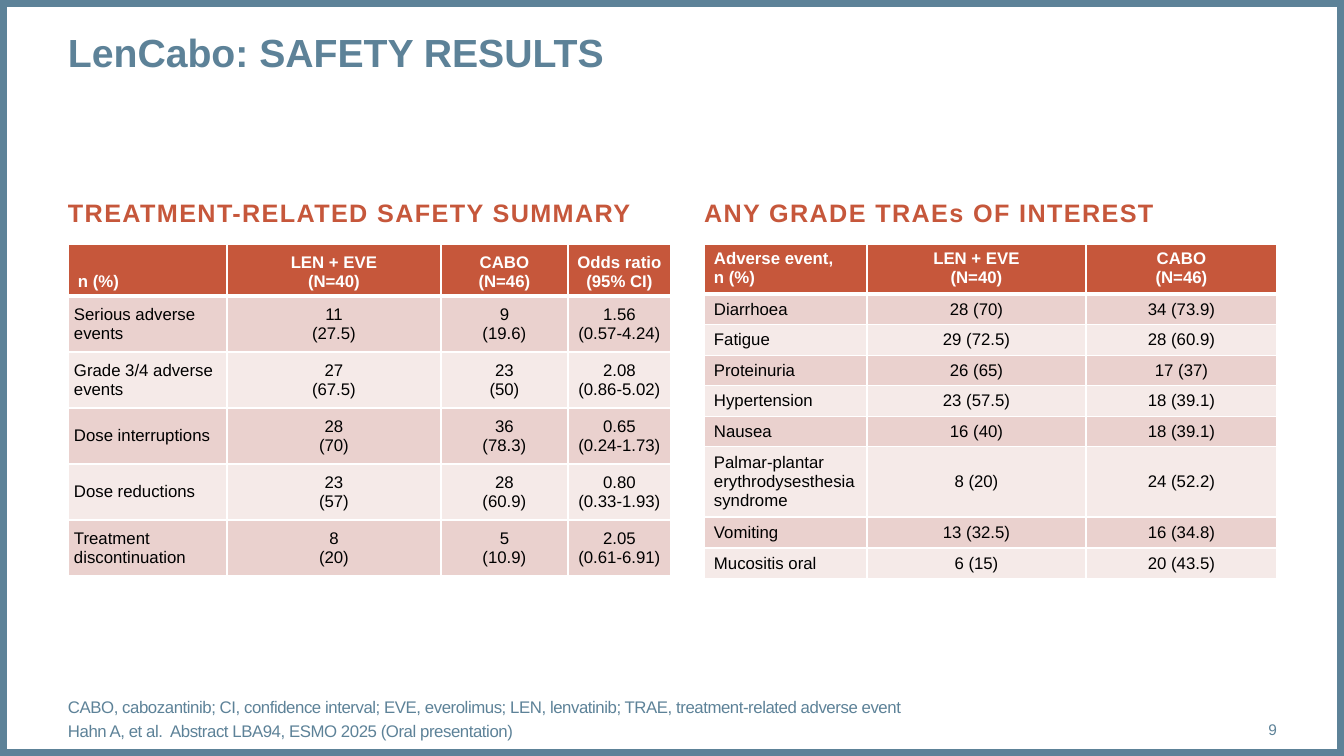
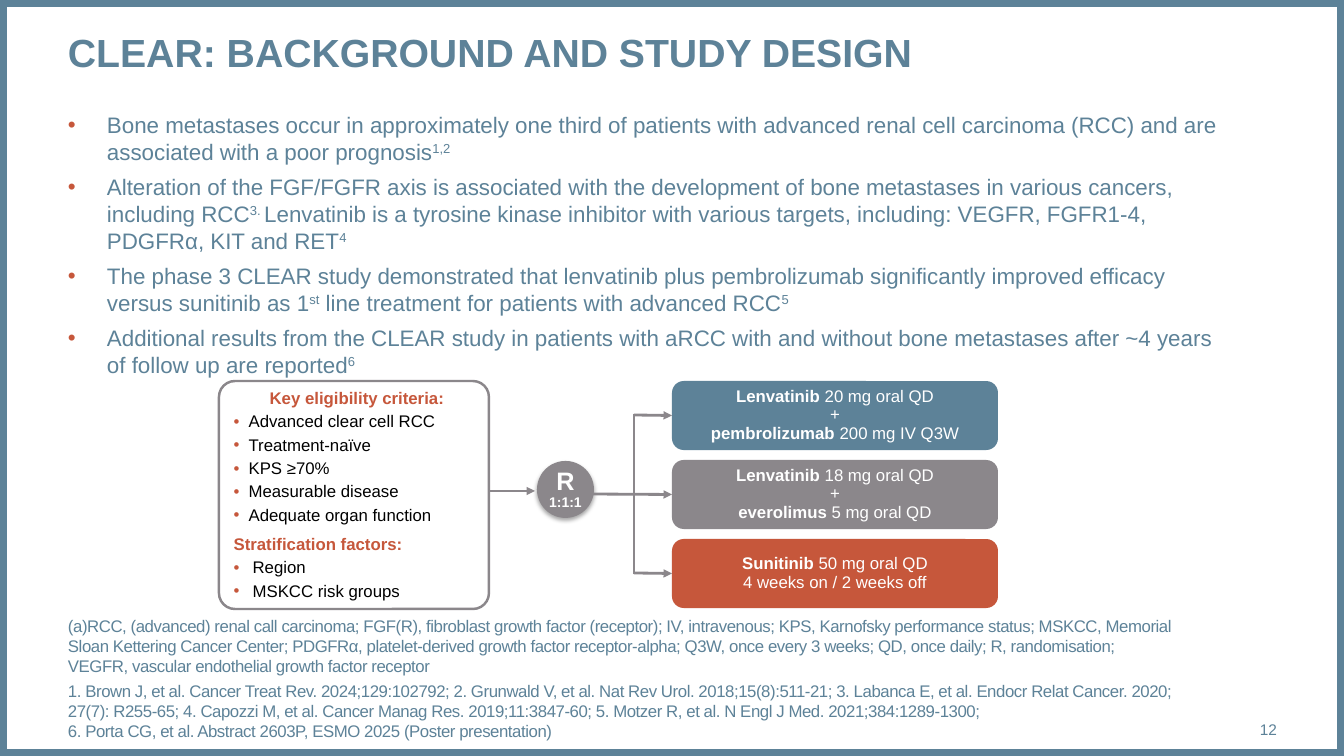
from copy import deepcopy

from pptx import Presentation
from pptx.dml.color import RGBColor
from pptx.enum.shapes import MSO_CONNECTOR, MSO_SHAPE
from pptx.enum.text import MSO_ANCHOR, PP_ALIGN
from pptx.oxml import parse_xml
from pptx.oxml.ns import nsdecls, qn
from pptx.util import Pt

# Scale: the slide is 1344 x 756 px
SLIDE_WIDTH, SLIDE_HEIGHT = 1344, 756
EMU_PER_PX = 12192000 / SLIDE_WIDTH
MARGIN = 68

# Shared look
FONT = "Arial"
BLUE = RGBColor(0x5D, 0x82, 0x98)
RUST = RGBColor(0xC6, 0x57, 0x3B)
GRAY = RGBColor(0x8B, 0x87, 0x8B)
BAND_DARK = RGBColor(0xEA, 0xD1, 0xCE)
BAND_LIGHT = RGBColor(0xF5, 0xEA, 0xE8)
WHITE = RGBColor(0xFF, 0xFF, 0xFF)
BLACK = RGBColor(0, 0, 0)
BOLD = {"bold": True}
SUPER = {"baseline": 30000}

TOP, MIDDLE, BOTTOM = MSO_ANCHOR.TOP, MSO_ANCHOR.MIDDLE, MSO_ANCHOR.BOTTOM
CENTER, RIGHT = PP_ALIGN.CENTER, PP_ALIGN.RIGHT
RECTANGLE, ROUNDED, OVAL = MSO_SHAPE.RECTANGLE, MSO_SHAPE.ROUNDED_RECTANGLE, MSO_SHAPE.OVAL
STRAIGHT = MSO_CONNECTOR.STRAIGHT
LEFT_SIDE = 1

SAFETY_SUMMARY = [
    ("n (%)", "LEN + EVE\n(N=40)", "CABO\n(N=46)", "Odds ratio\n(95% CI)"),
    ("Serious adverse events", "11\n(27.5)", "9\n(19.6)", "1.56\n(0.57-4.24)"),
    ("Grade 3/4 adverse events", "27\n(67.5)", "23\n(50)", "2.08\n(0.86-5.02)"),
    ("Dose interruptions", "28\n(70)", "36\n(78.3)", "0.65\n(0.24-1.73)"),
    ("Dose reductions", "23\n(57)", "28\n(60.9)", "0.80\n(0.33-1.93)"),
    ("Treatment discontinuation", "8\n(20)", "5\n(10.9)", "2.05\n(0.61-6.91)"),
]
ADVERSE_EVENTS = [
    ("Adverse event,\nn (%)", "LEN + EVE\n(N=40)", "CABO\n(N=46)"),
    ("Diarrhoea", "28 (70)", "34 (73.9)"),
    ("Fatigue", "29 (72.5)", "28 (60.9)"),
    ("Proteinuria", "26 (65)", "17 (37)"),
    ("Hypertension", "23 (57.5)", "18 (39.1)"),
    ("Nausea", "16 (40)", "18 (39.1)"),
    ("Palmar-plantar erythrodysesthesia syndrome", "8 (20)", "24 (52.2)"),
    ("Vomiting", "13 (32.5)", "16 (34.8)"),
    ("Mucositis oral", "6 (15)", "20 (43.5)"),
]
BACKGROUND = [
    [("Bone metastases occur in approximately one third of patients with advanced renal cell "
      "carcinoma (RCC) and are associated with a poor prognosis", {}), ("1,2", SUPER)],
    [("Alteration of the FGF/FGFR axis is associated with the development of bone metastases "
      "in various cancers, \nincluding RCC", {}), ("3. ", SUPER),
     ("Lenvatinib is a tyrosine kinase inhibitor with various targets, including: VEGFR, "
      "FGFR1-4, \nPDGFRα, KIT and RET", {}), ("4", SUPER)],
    [("The phase 3 CLEAR study demonstrated that lenvatinib plus pembrolizumab significantly "
      "improved efficacy \nversus sunitinib as 1", {}), ("st", SUPER),
     (" line treatment for patients with advanced RCC", {}), ("5", SUPER)],
    [("Additional results from the CLEAR study in patients with aRCC with and without bone "
      "metastases after ~4 years \nof follow up are reported", {}), ("6", SUPER)],
]
CRITERIA = ["Advanced clear cell RCC", "Treatment-naïve", "KPS ≥70%", "Measurable disease",
            "Adequate organ function"]
STRATIFICATION = ["Region", "MSKCC risk groups"]
ARMS = [
    (BLUE, [("Lenvatinib ", BOLD), ("20 mg oral QD\n+\n", {}),
            ("pembrolizumab ", BOLD), ("200 mg IV Q3W", {})]),
    (GRAY, [("Lenvatinib ", BOLD), ("18 mg oral QD\n+\n", {}),
            ("everolimus ", BOLD), ("5 mg oral QD", {})]),
    (RUST, [("Sunitinib ", BOLD), ("50 mg oral QD\n4 weeks on / 2 weeks off", {})]),
]


def px(length):
    return round(length * EMU_PER_PX)


# Text
def add_run(paragraph, text, size, color, bold=False, tracking=0, baseline=0):
    """Add text to a paragraph; each newline becomes a line break."""
    for index, line in enumerate(text.split("\n")):
        if index:
            paragraph.add_line_break()
            line_break = paragraph._p[-1]
        run = paragraph.add_run()
        run.text = line
        run.font.name, run.font.size, run.font.bold = FONT, Pt(size), bold
        run.font.color.rgb = color
        properties = run._r.get_or_add_rPr()
        if tracking:
            properties.set("spc", str(tracking))
        if baseline:
            properties.set("baseline", str(baseline))
        if index:
            line_break.append(deepcopy(properties))
        if not line:
            paragraph._p.remove(run._r)


def write(frame, content, align=None, spacing=None, before=0, after=0, bullet=0, **style):
    """Add one paragraph: content is a string or (text, style) pairs; bullet is its indent."""
    paragraph = frame.paragraphs[0]
    if len(paragraph._p.findall(qn("a:r"))):
        paragraph = frame.add_paragraph()
        paragraph.space_before = Pt(before)
    if bullet:
        properties = paragraph._p.get_or_add_pPr()
        properties.set("marL", str(px(bullet)))
        properties.set("indent", str(-px(bullet)))
        for xml in (f'<a:buClr {nsdecls("a")}><a:srgbClr val="{RUST}"/></a:buClr>',
                    f'<a:buFont {nsdecls("a")} typeface="{FONT}"/>',
                    f'<a:buChar {nsdecls("a")} char="•"/>'):
            properties.append(parse_xml(xml))
    paragraph.space_after = Pt(after)
    if align is not None:
        paragraph.alignment = align
    if spacing:
        paragraph.line_spacing = spacing
    for text, changes in [(content, {})] if isinstance(content, str) else content:
        add_run(paragraph, text, **{**style, **changes})


def set_frame(frame, anchor, insets, wrap=True):
    frame.word_wrap = wrap
    frame.vertical_anchor = anchor
    (frame.margin_left, frame.margin_top,
     frame.margin_right, frame.margin_bottom) = map(px, insets)


def add_text_box(slide, left, top, width, height, paragraphs, anchor=TOP,
                 insets=(0, 0, 0, 0), wrap=True, **style):
    frame = slide.shapes.add_textbox(px(left), px(top), px(width), px(height)).text_frame
    set_frame(frame, anchor, insets, wrap)
    for content in paragraphs:
        write(frame, content, **style)


# Shapes and lines
def add_box(slide, kind, left, top, width, height, fill=None, line=None, line_width=1,
            radius=None, insets=(10, 5, 10, 5)):
    shape = slide.shapes.add_shape(kind, px(left), px(top), px(width), px(height))
    shape.shadow.inherit = False
    if fill is None:
        shape.fill.background()
    else:
        shape.fill.solid()
        shape.fill.fore_color.rgb = fill
    if line is None:
        shape.line.fill.background()
    else:
        shape.line.color.rgb = line
        shape.line.width = Pt(line_width)
    if radius is not None:
        shape.adjustments[0] = radius
    set_frame(shape.text_frame, MIDDLE, insets)
    return shape


def add_line(slide, start, end, arrow=True, target=None):
    connector = slide.shapes.add_connector(STRAIGHT, *map(px, start + end))
    connector.line.color.rgb = GRAY
    connector.line.width = Pt(2)
    properties = connector._element.spPr
    if arrow:
        properties.find(qn("a:ln")).append(
            parse_xml(f'<a:tailEnd {nsdecls("a")} type="triangle"/>'))
    properties.append(parse_xml(f'<a:effectLst {nsdecls("a")}/>'))
    if target is not None:
        connector.end_connect(target, LEFT_SIDE)


def add_soft_shadow(shape):
    shape._element.spPr.find(qn("a:effectLst")).append(parse_xml(
        f'<a:outerShdw {nsdecls("a")} blurRad="{Pt(3.1)}" dist="{Pt(1.8)}" dir="5400000">'
        '<a:srgbClr val="000000"><a:alpha val="35000"/></a:srgbClr></a:outerShdw>'))


# Tables
def set_borders(cell, top, bottom):
    properties = cell._tc.get_or_add_tcPr()
    for index, (side, width) in enumerate((("L", 1), ("R", 1), ("T", top), ("B", bottom))):
        properties.insert(index, parse_xml(
            f'<a:ln{side} {nsdecls("a")} w="{Pt(width)}"><a:solidFill>'
            f'<a:srgbClr val="{WHITE}"/></a:solidFill></a:ln{side}>'))


def add_data_table(slide, left, top, widths, heights, rows, header_anchor, label_inset):
    table = slide.shapes.add_table(len(rows), len(widths), px(left), px(top),
                                   px(sum(widths)), px(sum(heights))).table
    for column, width in zip(table.columns, widths):
        column.width = px(width)
    for row_index, values in enumerate(rows):
        table.rows[row_index].height = px(heights[row_index])
        header = row_index == 0
        fill = RUST if header else BAND_DARK if row_index % 2 else BAND_LIGHT
        for column_index, value in enumerate(values):
            cell = table.cell(row_index, column_index)
            cell.fill.solid()
            cell.fill.fore_color.rgb = fill
            set_borders(cell, 3 if row_index == 1 else 1, 3 if header else 1)
            cell.vertical_anchor = header_anchor if header else MIDDLE
            label = column_index == 0
            cell.margin_left = px((10 if header else label_inset) if label else 0)
            cell.margin_right = 0
            cell.margin_top = cell.margin_bottom = px(5)
            write(cell.text_frame, value, align=None if label else CENTER, size=12,
                  color=WHITE if header else BLACK, bold=header)


# Parts that every slide has
def add_slide(presentation, title, number, footnotes):
    slide = presentation.slides.add_slide(presentation.slide_layouts[6])
    add_box(slide, RECTANGLE, 0, 0, SLIDE_WIDTH, SLIDE_HEIGHT, line=BLUE, line_width=10)
    add_text_box(slide, MARGIN, 28, 1209, 95, [title], size=28, color=BLUE, bold=True)
    add_text_box(slide, MARGIN, 601, 1122, 140, footnotes, anchor=BOTTOM,
                 before=3, size=12, color=BLUE, tracking=-30)
    add_text_box(slide, 1190, 709, 87, 40, [str(number)], anchor=MIDDLE,
                 align=RIGHT, size=11, color=BLUE)
    return slide


def add_section_heading(slide, left, text):
    add_text_box(slide, left, 192, 580, 40, [text], insets=(0, 5, 10, 5), wrap=False,
                 size=18, color=RUST, bold=True, tracking=100)


def build_safety_slide(presentation):
    slide = add_slide(presentation, "LenCabo: SAFETY RESULTS", 9, [
        "CABO, cabozantinib; CI, confidence interval; EVE, everolimus; LEN, lenvatinib; "
        "TRAE, treatment-related adverse event",
        "Hahn A, et al.  Abstract LBA94, ESMO 2025 (Oral presentation)"])
    add_section_heading(slide, MARGIN, "TREATMENT-RELATED SAFETY SUMMARY")
    add_data_table(slide, MARGIN, 244, [159, 214, 127, 103], [52] + [56] * 5,
                   SAFETY_SUMMARY, BOTTOM, 6)
    add_section_heading(slide, 704, "ANY GRADE TRAEs OF INTEREST")
    add_data_table(slide, 704, 244, [163, 219, 191], [50, 30, 31, 30, 31, 30, 70, 31, 30],
                   ADVERSE_EVENTS, TOP, 10)


def build_design_slide(presentation):
    slide = add_slide(presentation, "CLEAR: BACKGROUND AND STUDY DESIGN", 12, [
        "(a)RCC, (advanced) renal call carcinoma; FGF(R), fibroblast growth factor (receptor); "
        "IV, intravenous; KPS, Karnofsky performance status; MSKCC, Memorial Sloan Kettering "
        "Cancer Center; PDGFRα, platelet-derived growth factor receptor-alpha; Q3W, once every "
        "3 weeks; QD, once daily; R, randomisation;\n"
        "VEGFR, vascular endothelial growth factor receptor",
        "1. Brown J, et al. Cancer Treat Rev. 2024;129:102792; 2. Grunwald V, et al. Nat Rev "
        "Urol. 2018;15(8):511-21; 3. Labanca E, et al. Endocr Relat Cancer. 2020; 27(7): "
        "R255-65; 4. Capozzi M, et al. Cancer Manag Res. 2019;11:3847-60; 5. Motzer R, et al. "
        "N Engl J Med. 2021;384:1289-1300; \n"
        "6. Porta CG, et al. Abstract 2603P, ESMO 2025 (Poster presentation)"])
    add_text_box(slide, MARGIN, 111, 1209, 234, BACKGROUND, before=6, bullet=39,
                 size=16, color=BLUE)

    # Eligibility and stratification
    criteria = add_box(slide, ROUNDED, 219, 381, 270, 228, fill=WHITE, line=GRAY,
                       line_width=1.75, radius=0.07, insets=(10, 5, 4, 5)).text_frame
    for heading, items, indent in (("Key eligibility criteria:", CRITERIA, 15),
                                   ("Stratification factors:", STRATIFICATION, 19)):
        write(criteria, heading, spacing=0.95, before=4, after=3, size=12, color=RUST, bold=True)
        for item in items:
            write(criteria, item, spacing=0.95, after=3, bullet=indent, size=12, color=BLACK)

    # Randomisation
    randomisation = add_box(slide, OVAL, 537, 461, 57, 57, fill=GRAY, insets=(0, 5, 0, 5))
    add_soft_shadow(randomisation)
    for text, size in (("R", 18), ("1:1:1", 10)):
        write(randomisation.text_frame, text, align=CENTER, spacing=0.9,
              size=size, color=WHITE, bold=True)
    add_line(slide, (489, 491), (535, 491))

    # Treatment arms
    arm_left, arm_top, arm_height, arm_step, trunk = 672, 381, 69, 79, 634
    centers = [arm_top + index * arm_step + arm_height // 2 for index in range(len(ARMS))]
    for (fill, content), center, start in zip(ARMS, centers, (trunk, 592, trunk)):
        arm = add_box(slide, ROUNDED, arm_left, center - arm_height // 2, 326, arm_height,
                      fill=fill, radius=0.17)
        write(arm.text_frame, content, align=CENTER, spacing=0.9, size=12, color=WHITE)
        add_line(slide, (start, center), (arm_left, center), target=arm)
    add_line(slide, (trunk, centers[0] - 1), (trunk, centers[-1] + 1), arrow=False)


def main():
    presentation = Presentation()
    presentation.slide_width = px(SLIDE_WIDTH)
    presentation.slide_height = px(SLIDE_HEIGHT)
    build_safety_slide(presentation)
    build_design_slide(presentation)
    presentation.save("out.pptx")


if __name__ == "__main__":
    main()
